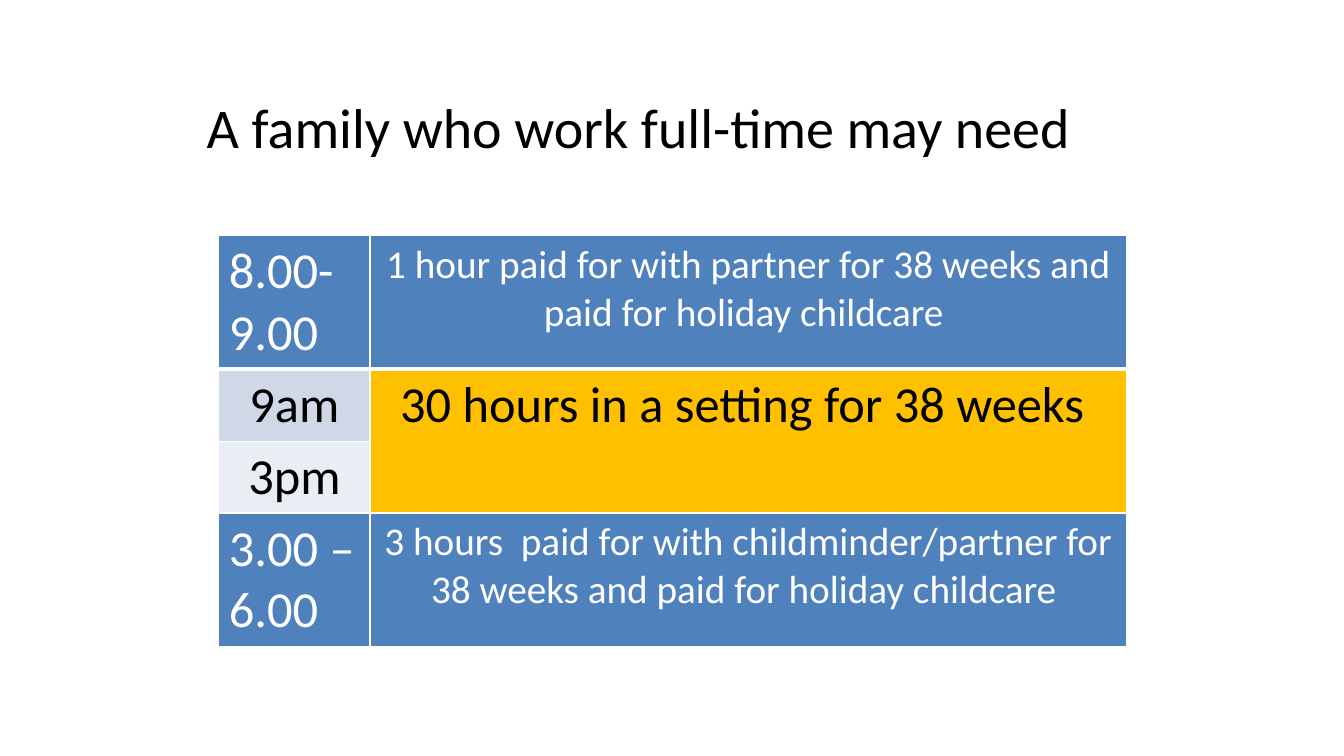
from dataclasses import dataclass

from lxml.etree import SubElement
from pptx import Presentation
from pptx.dml.color import RGBColor
from pptx.enum.text import MSO_ANCHOR, PP_ALIGN
from pptx.oxml.ns import qn
from pptx.util import Inches, Pt


@dataclass(frozen=True)
class Theme:
    font: str = "Calibri"
    black: str = "000000"
    white: str = "FFFFFF"
    blue: str = "4F81BD"
    pale_blue: str = "D0D8E8"
    paler_blue: str = "E9EDF4"
    amber: str = "FFC000"
    title_size: int = 40
    time_size: int = 36
    care_size: int = 28
    thin_border: int = 1
    thick_border: int = 3


theme = Theme()


def style_text(paragraph, size, color, alignment):
    paragraph.alignment = alignment
    paragraph.font.name = theme.font
    paragraph.font.size = Pt(size)
    paragraph.font.bold = False
    paragraph.font.color.rgb = RGBColor.from_string(color)


def add_border(cell, side, width):
    line = SubElement(cell._tc.get_or_add_tcPr(), qn(f"a:ln{side}"), w=str(Pt(width)))
    fill = SubElement(line, qn("a:solidFill"))
    SubElement(fill, qn("a:srgbClr"), val=theme.white)


# Slide
deck = Presentation()
deck.slide_width = Inches(13.33)
deck.slide_height = Inches(7.5)
page = deck.slides.add_slide(deck.slide_layouts[5])

# Title
title = page.shapes.title
title.left, title.top = Inches(1.95), Inches(0.63)
title.width, title.height = Inches(9), Inches(1.25)
title.text_frame.text = "A family who work full-time may need"
title.text_frame.vertical_anchor = MSO_ANCHOR.MIDDLE
style_text(title.text_frame.paragraphs[0], theme.title_size, theme.black, PP_ALIGN.LEFT)

# Timetable: each cell holds text, fill, text colour, size and alignment
left, center = PP_ALIGN.LEFT, PP_ALIGN.CENTER
timetable = [
    [("8.00-9.00", theme.blue, theme.white, theme.time_size, left),
     ("1 hour paid for with partner for 38 weeks and paid for holiday childcare ",
      theme.blue, theme.white, theme.care_size, center)],
    [("9am", theme.pale_blue, theme.black, theme.time_size, center),
     ("30 hours in a setting for 38 weeks ",
      theme.amber, theme.black, theme.time_size, center)],
    [("3pm", theme.paler_blue, theme.black, theme.time_size, center),
     ("", theme.amber, theme.black, theme.time_size, center)],
    [("3.00 – 6.00", theme.blue, theme.white, theme.time_size, left),
     ("3 hours  paid for with childminder/partner for 38 weeks and paid for holiday childcare ",
      theme.blue, theme.white, theme.care_size, center)],
]
row_heights = [1.31, 0.71, 0.71, 1.31]
column_widths = [1.5, 7.5]
table = page.shapes.add_table(
    len(row_heights), len(column_widths),
    Inches(2.17), Inches(2.34), Inches(sum(column_widths)), Inches(sum(row_heights)),
).table
for column, width in zip(table.columns, column_widths):
    column.width = Inches(width)
for row, height in zip(table.rows, row_heights):
    row.height = Inches(height)

for row_index, entries in enumerate(timetable):
    for column_index, (text, fill, color, size, alignment) in enumerate(entries):
        cell = table.cell(row_index, column_index)
        cell.text = text
        style_text(cell.text_frame.paragraphs[0], size, color, alignment)
        # The header row is set off by a thick line; borders precede the fill
        for side in "LRTB":
            under_header = (row_index, side) in [(0, "B"), (1, "T")]
            add_border(cell, side, theme.thick_border if under_header else theme.thin_border)
        cell.fill.solid()
        cell.fill.fore_color.rgb = RGBColor.from_string(fill)

# The funded hours span the whole school day
table.cell(1, 1).merge(table.cell(2, 1))

deck.save("out.pptx")
